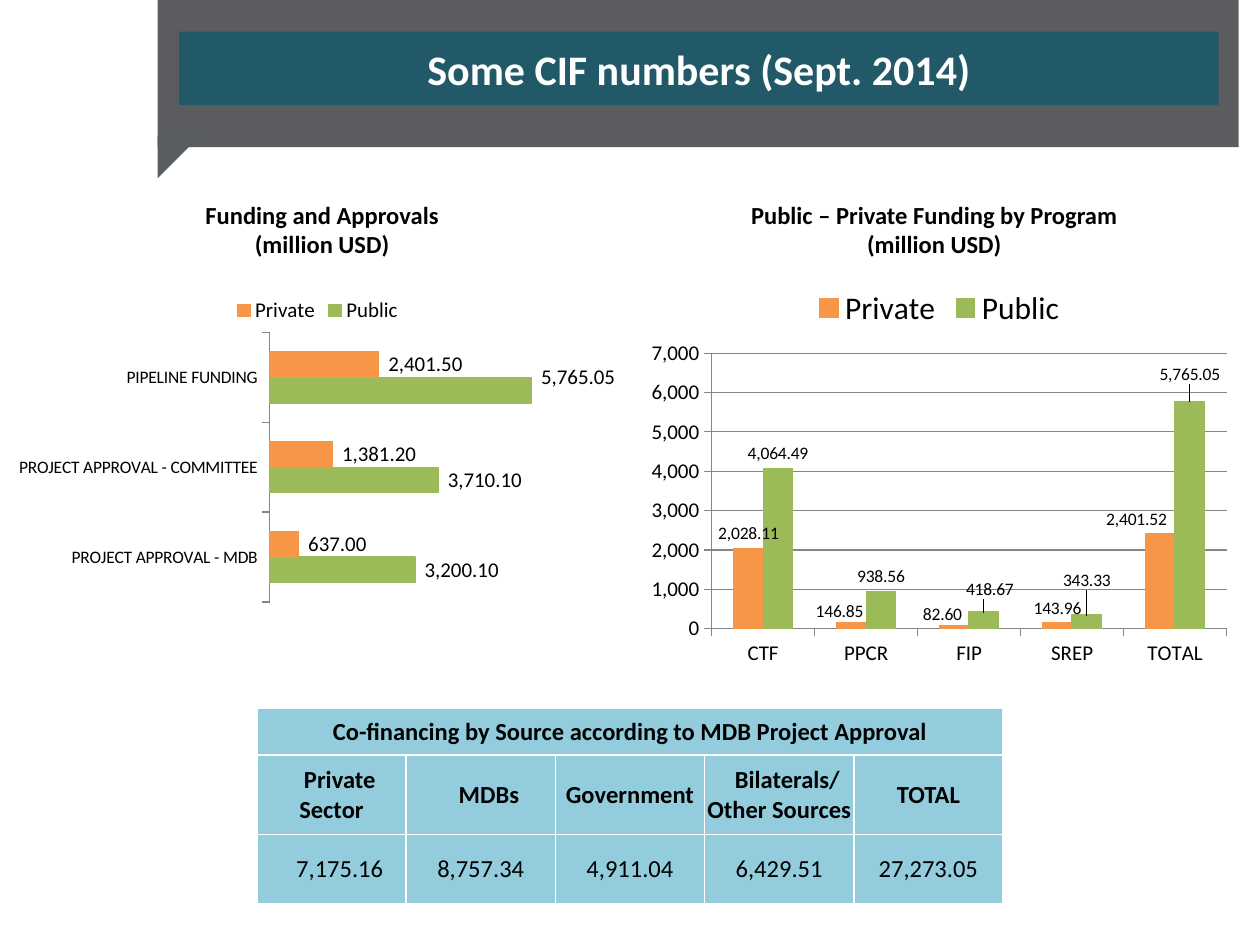
from copy import deepcopy
from dataclasses import dataclass

from lxml import etree
from pptx import Presentation
from pptx import util as u
from pptx.chart.data import CategoryChartData
from pptx.dml.color import RGBColor
from pptx.enum import chart as charts, shapes, text
from pptx.oxml import ns


@dataclass(frozen=True)
class Theme:
    font: str = "Calibri"
    ink: str = "000000"
    paper: str = "FFFFFF"
    banner: str = "5A5C60"
    fold: str = "595C60"
    title_bar: str = "215968"
    cell: str = "93CDDD"
    axis: str = "868686"
    private: str = "F79646"
    public: str = "9BBB59"
    title: int = 24
    legend: int = 18
    body: int = 14
    label: int = 12
    small: int = 10


THEME = Theme()
AMOUNT = '_(* #,##0.00_);_(* \\(#,##0.00\\);_(* "-"??_);_(@_)'


def colour(value):
    return RGBColor.from_string(value)


def child(parent, tag, **attributes):
    return etree.SubElement(parent, ns.qn(tag), attributes)


def manual_layout(**settings):
    """Return a c:layout element with the given settings, in order."""
    layout = etree.Element(ns.qn("c:layout"))
    manual = child(layout, "c:manualLayout")
    for name, value in settings.items():
        child(manual, f"c:{name}", val=str(value))
    return layout


class Page:
    def __init__(self, deck, theme):
        self.theme = theme
        self.slide = deck.slides.add_slide(deck.slide_layouts[6])

    def set_text(self, frame, lines, size, ink, bold=True):
        frame.word_wrap = True
        frame.text = "\n".join(lines)
        for para in frame.paragraphs:
            para.alignment = text.PP_ALIGN.CENTER
            para.font.name = self.theme.font
            para.font.size = u.Pt(size)
            para.font.bold = bold
            para.font.color.rgb = colour(ink)

    def block(self, box, fill, kind=shapes.MSO_SHAPE.RECTANGLE):
        shape = self.slide.shapes.add_shape(kind, *map(u.Cm, box))
        shape.shadow.inherit = False
        shape.fill.solid()
        shape.fill.fore_color.rgb = colour(fill)
        shape.line.fill.background()
        return shape

    def panel(self, box, lines):
        frame = self.block(box, self.theme.paper).text_frame
        frame.vertical_anchor = text.MSO_ANCHOR.TOP
        frame.margin_top = u.Cm(0.25)
        self.set_text(frame, lines, self.theme.body, self.theme.ink)

    def chart(self, kind, box, categories, series, plot_box, category_size, label_size):
        """Each series is (name, fill, values, {point: (dx, dy) label shift})."""
        data = CategoryChartData()
        data.categories = categories
        for name, _, values, _ in series:
            data.add_series(name, values)
        chart = self.slide.shapes.add_chart(kind, *map(u.Cm, box), data).chart
        chart.has_title = False
        chart.font.name = self.theme.font
        chart.font.size = u.Pt(self.theme.legend)
        chart.font.color.rgb = colour(self.theme.ink)
        chart.has_legend = True
        chart.legend.position = charts.XL_LEGEND_POSITION.TOP
        chart.legend.include_in_layout = False

        area = chart._chartSpace.chart.plotArea
        for layout in area.findall(ns.qn("c:layout")):
            area.remove(layout)
        area.insert(0, manual_layout(layoutTarget="inner", xMode="edge", yMode="edge",
                                     **dict(zip("xywh", plot_box))))
        for axis in (chart.category_axis, chart.value_axis):
            axis.format.line.color.rgb = colour(self.theme.axis)
            axis.major_tick_mark = charts.XL_TICK_MARK.OUTSIDE
        chart.category_axis.tick_labels.font.size = u.Pt(category_size)
        value_axis = chart.value_axis
        value_axis.minimum_scale, value_axis.maximum_scale = 0, 7000
        value_axis.major_unit = 1000
        value_axis.has_major_gridlines = False

        plot = chart.plots[0]
        plot.gap_width = 150
        plot.vary_by_categories = False
        for item, (_, fill, _, shifts) in zip(plot.series, series):
            item.format.fill.solid()
            item.format.fill.fore_color.rgb = colour(fill)
            item.format.line.color.rgb = colour(fill)
            item.format.line.width = u.Pt(0.75)
            self.value_labels(item, label_size, shifts)
        return chart

    def value_labels(self, series, size, shifts):
        labels = series.data_labels
        labels.show_value = True
        labels.position = charts.XL_LABEL_POSITION.OUTSIDE_END
        labels.number_format = AMOUNT
        labels.number_format_is_linked = False
        labels.font.size = u.Pt(size)
        number_format = labels._element.find(ns.qn("c:numFmt"))
        for point, (dx, dy) in shifts.items():
            label = series.points[point].data_label
            label.font.size = u.Pt(size)
            label.position = charts.XL_LABEL_POSITION.OUTSIDE_END
            index = label._dLbl.find(ns.qn("c:idx"))
            index.addnext(deepcopy(number_format))
            index.addnext(manual_layout(x=dx, y=dy))

    def table(self, box, rows, heights, indented):
        """Add a table whose first row is one merged heading."""
        columns = len(rows[-1])
        table = self.slide.shapes.add_table(
            len(rows), columns, *map(u.Cm, box)).table
        table.first_row = table.horz_banding = False
        for column in table.columns:
            column.width = u.Cm(box[2] / columns)
        for row, height in zip(table.rows, heights):
            row.height = u.Cm(height)
        table.cell(0, 0).merge(table.cell(0, columns - 1))
        for cell in table.iter_cells():
            self.style_cell(cell)
        for r, row in enumerate(rows):
            for c, words in enumerate(row):
                frame = table.cell(r, c).text_frame
                self.set_text(frame, [words], self.theme.body, self.theme.ink,
                              bold=r < len(rows) - 1)
                if words in indented:
                    properties = frame.paragraphs[0]._p.get_or_add_pPr()
                    properties.set("marL", "0")
                    properties.set("indent", str(u.Cm(0.33)))

    def style_cell(self, cell):
        cell.vertical_anchor = text.MSO_ANCHOR.MIDDLE
        cell.margin_left = cell.margin_right = cell.margin_top = cell.margin_bottom = 0
        properties = cell._tc.get_or_add_tcPr()
        for side in "LRTB":
            line = child(properties, f"a:ln{side}", w=str(u.Pt(1)))
            child(child(line, "a:solidFill"), "a:srgbClr", val=self.theme.paper)
        cell.fill.solid()
        cell.fill.fore_color.rgb = colour(self.theme.cell)


def main():
    deck = Presentation()
    deck.slide_width, deck.slide_height = u.Cm(25.4), u.Cm(19.05)
    page = Page(deck, THEME)

    page.block((3.18, 0, 21.79, 2.97), THEME.banner)
    fold = page.block((3.18, 2.75, 0.84, 0.84), THEME.fold,
                      shapes.MSO_SHAPE.RIGHT_TRIANGLE)
    fold.rotation = 90
    title = page.block((3.61, 0.64, 20.96, 1.48), THEME.title_bar).text_frame
    title.vertical_anchor = text.MSO_ANCHOR.MIDDLE
    page.set_text(title, ["Some CIF numbers (Sept. 2014)"], THEME.title, THEME.paper)

    page.panel((12.7, 3.78, 12.27, 9.78),
               ["Public – Private Funding by Program", "(million USD)"])
    programs = page.chart(
        charts.XL_CHART_TYPE.COLUMN_CLUSTERED, (12.9, 5.51, 12.07, 8.05),
        ["CTF", "PPCR", "FIP", "SREP", "TOTAL"],
        [("Private", THEME.private, [2028.11, 146.85, 82.6, 143.96, 2401.52],
          {1: (-0.02, 0.01), 2: (-0.02, 0.01), 4: (-0.04, 0)}),
         ("Public", THEME.public, [4064.49, 938.56, 418.67, 343.33, 5765.05],
          {2: (0.01, -0.02), 3: (0, -0.05), 4: (0, -0.03)})],
        (0.12, 0.2, 0.86, 0.69), THEME.label, THEME.small)
    amounts = programs.value_axis
    amounts.has_major_gridlines = True
    amounts.major_gridlines.format.line.color.rgb = colour(THEME.axis)
    amounts.tick_labels.font.size = u.Pt(THEME.label)
    amounts.tick_labels.number_format = "#,##0"
    amounts.tick_labels.number_format_is_linked = False

    page.panel((0.36, 3.78, 12.27, 9.78), ["Funding and Approvals", "(million USD)"])
    approvals = page.chart(
        charts.XL_CHART_TYPE.BAR_CLUSTERED, (0.36, 5.72, 12.14, 6.55),
        ["PROJECT APPROVAL - MDB", "PROJECT APPROVAL - COMMITTEE", "PIPELINE FUNDING"],
        [("Public", THEME.public, [3200.1, 3710.1, 5765.05], {2: (0, -0.04)}),
         ("Private", THEME.private, [637, 1381.2, 2401.5], {})],
        (0.42, 0.15, 0.53, 0.83), THEME.small, THEME.label)
    approvals.value_axis.visible = False
    approvals.legend.font.size = u.Pt(THEME.label)

    page.table(
        (5.18, 14.28, 15.04, 3.94),
        [["Co-financing by Source according to MDB Project Approval"],
         ["Private Sector", "MDBs", "Government", "Bilaterals/ Other Sources", "TOTAL"],
         ["7,175.16", "8,757.34", "4,911.04", "6,429.51", "27,273.05"]],
        (0.94, 1.6, 1.4),
        indented={"Private Sector", "MDBs", "Bilaterals/ Other Sources", "7,175.16"})

    deck.save("out.pptx")


if __name__ == "__main__":
    main()
